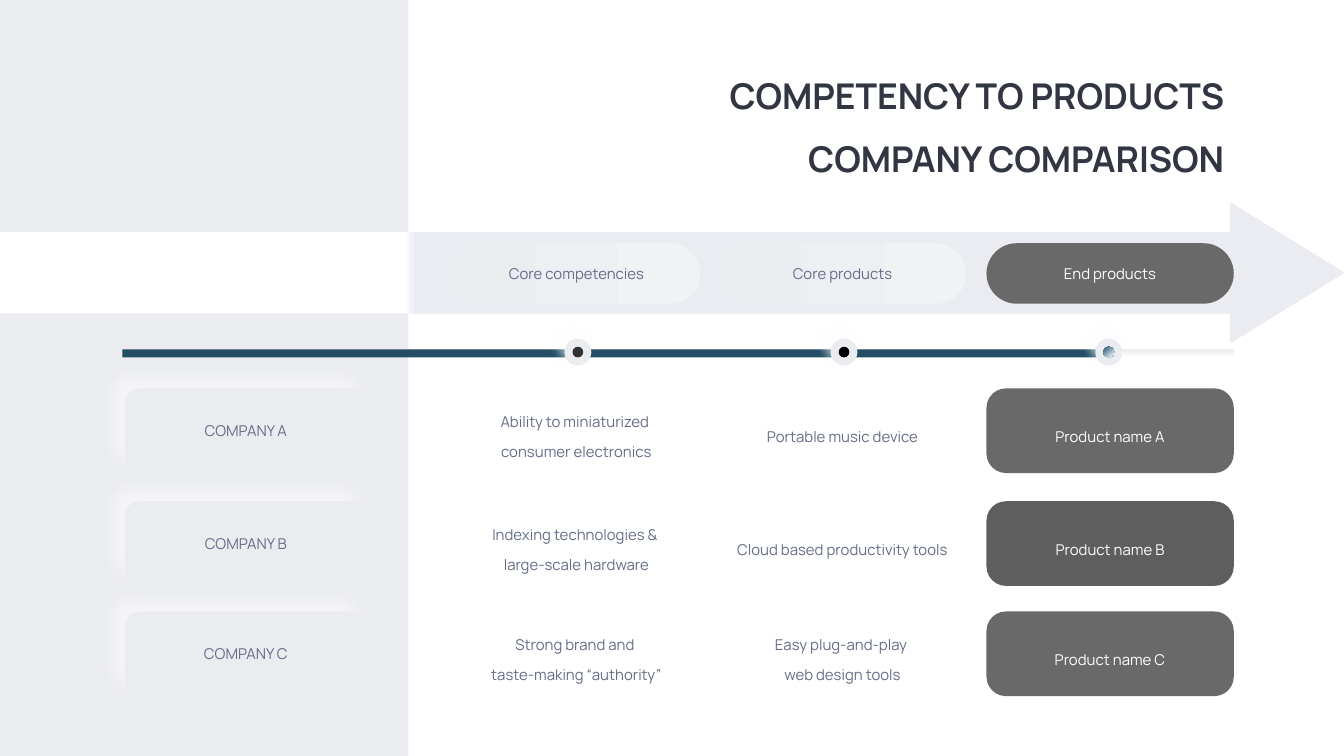
from dataclasses import dataclass

from pptx import Presentation
from pptx.dml.color import RGBColor
from pptx.enum.shapes import MSO_SHAPE
from pptx.enum.text import MSO_ANCHOR, MSO_AUTO_SIZE, PP_ALIGN
from pptx.oxml import parse_xml
from pptx.oxml.ns import nsdecls, qn
from pptx.util import Inches, Pt

RECTANGLE, ROUNDED = MSO_SHAPE.RECTANGLE, MSO_SHAPE.ROUNDED_RECTANGLE
OVAL, ARROW = MSO_SHAPE.OVAL, MSO_SHAPE.RIGHT_ARROW
CENTER, RIGHT = PP_ALIGN.CENTER, PP_ALIGN.RIGHT
TOP, MIDDLE = MSO_ANCHOR.TOP, MSO_ANCHOR.MIDDLE
GROW = MSO_AUTO_SIZE.SHAPE_TO_FIT_TEXT

WIDTH = 10
HEIGHT = WIDTH * 9 / 16
FONT = "Manrope"
WHITE, PANEL, BAND, PALE = "FFFFFF", "EBECF0", "EBECF1", "F1F2F4"
INK, SLATE, TEAL, GRAY, DARK_GRAY = "323643", "656C87", "234E65", "696969", "5E5E5E"

COLUMNS = (3.37, 5.35, 7.34)
ROWS = (2.89, 3.73, 4.55)
CELL_WIDTH, CELL_HEIGHT = 1.84, 0.63
HEADER_TOP, HEADER_HEIGHT = 1.81, 0.45
CARD_LEFT, CARD_WIDTH = 0.93, 1.8
TRACK_LEFT, TRACK_TOP, TRACK_HEIGHT = 0.91, 2.6, 0.06
DOT_Y, RING_SIZE, DOT_SIZE = 2.62, 0.2, 0.08


@dataclass(frozen=True)
class Gradient:
    stops: tuple[tuple[int, str], ...]
    angle: int = 0


@dataclass(frozen=True)
class Glow:
    """A white shadow towards the upper left, in points."""
    blur: int
    distance: int


@dataclass(frozen=True)
class Box:
    left: float
    top: float
    width: float
    height: float


@dataclass(frozen=True)
class Company:
    name: str
    competency: tuple[str, ...]
    products: tuple[str, ...]
    end_product: str
    end_fill: str = GRAY


@dataclass(frozen=True)
class Stage:
    title: str
    fill: str | Gradient
    color: str
    dot_x: float
    dot_fill: str | Gradient


SOFT = Gradient(((0, PALE), (100, PANEL)), 180)
STAGES = (
    Stage("Core competencies", SOFT, SLATE, 4.3, "323232"),
    Stage("Core products", SOFT, SLATE, 6.28, "000000"),
    Stage("End products", GRAY, WHITE, 8.25,
          Gradient(((0, TEAL), (84, "DAE5F1"), (100, "DAE5F1")), 50)),
)
COMPANIES = (
    Company("COMPANY A", ("Ability to miniaturized ", "consumer electronics"),
            ("Portable music device",), "Product name A"),
    Company("COMPANY B", ("Indexing technologies & ", "large-scale hardware"),
            ("Cloud based productivity tools",), "Product name B", DARK_GRAY),
    Company("COMPANY C", ("Strong brand and ", "taste-making “authority”"),
            ("Easy plug-and-play ", "web design tools"), "Product name C"),
)


def rgb(color: str) -> RGBColor:
    return RGBColor.from_string(color)


def apply_fill(shape, fill: str | Gradient) -> None:
    if isinstance(fill, str):
        shape.fill.solid()
        shape.fill.fore_color.rgb = rgb(fill)
        return
    shape.fill.gradient()
    properties = shape._element.spPr
    stops = "".join(f'<a:gs pos="{place * 1000}"><a:srgbClr val="{color}"/></a:gs>'
                    for place, color in fill.stops)
    properties.replace(properties.find(qn("a:gradFill")), parse_xml(
        f'<a:gradFill rotWithShape="1" {nsdecls("a")}><a:gsLst>{stops}</a:gsLst>'
        f'<a:lin ang="{fill.angle * 60000}" scaled="0"/></a:gradFill>'))


def apply_glow(shape, glow: Glow) -> None:
    effects = shape._element.spPr.find(qn("a:effectLst"))
    effects.append(parse_xml(
        f'<a:outerShdw {nsdecls("a")} blurRad="{Pt(glow.blur)}" dist="{Pt(glow.distance)}"'
        f' dir="{225 * 60000}" algn="ctr" rotWithShape="0"><a:srgbClr val="{WHITE}">'
        '<a:alpha val="56000"/></a:srgbClr></a:outerShdw>'))


def add_block(shapes, kind, box: Box, fill: str | Gradient,
              adjustments: tuple[float, ...] = (), glow: Glow | None = None):
    shape = shapes.add_shape(kind, Inches(box.left), Inches(box.top),
                             Inches(box.width), Inches(box.height))
    for index, value in enumerate(adjustments):
        shape.adjustments[index] = value
    apply_fill(shape, fill)
    shape.line.fill.background()
    shape.shadow.inherit = False
    if glow:
        apply_glow(shape, glow)
    return shape


def write(shape, lines: tuple[str, ...], color: str, size: int = 8, spacing: float = 1.0,
          align=CENTER, anchor=MIDDLE, bold: bool = False) -> None:
    frame = shape.text_frame
    frame.word_wrap = True
    frame.vertical_anchor = anchor
    frame.margin_left = frame.margin_right = Inches(0.07)
    frame.margin_top = frame.margin_bottom = Inches(0.04)
    for index, line in enumerate(lines):
        para = frame.add_paragraph() if index else frame.paragraphs[0]
        para.alignment = align
        para.line_spacing = spacing
        span = para.add_run()
        span.text = line
        span.font.name, span.font.size, span.font.bold = FONT, Pt(size), bold
        span.font.color.rgb = rgb(color)


def add_title(slide) -> None:
    title = slide.shapes.title
    title.left, title.top = Inches(5.1), Inches(0.35)
    title.width, title.height = Inches(4.08), Inches(0.88)
    write(title, ("COMPETENCY TO PRODUCTS COMPANY COMPARISON",), INK, 19, 1.5,
          RIGHT, TOP, bold=True)
    title.text_frame.auto_size = GROW


def add_header(shapes, left: float, stage: Stage) -> None:
    box = Box(left, HEADER_TOP, CELL_WIDTH, HEADER_HEIGHT)
    write(add_block(shapes, ROUNDED, box, stage.fill, (0.5,)), (stage.title,), stage.color)


def add_company(shapes, top: float, company: Company) -> None:
    cells = ((company.competency, WHITE, SLATE), (company.products, WHITE, SLATE),
             ((company.end_product,), company.end_fill, WHITE))
    for left, (lines, fill, color) in zip(COLUMNS, cells):
        box = Box(left, top, CELL_WIDTH, CELL_HEIGHT)
        write(add_block(shapes, ROUNDED, box, fill, (0.23,)), lines, color, spacing=1.66)
    card = add_block(shapes, ROUNDED, Box(CARD_LEFT, top, CARD_WIDTH, CELL_HEIGHT),
                     PANEL, (0.17,), Glow(9, 9))
    write(card, (company.name,), SLATE)


def add_marker(shapes, stage: Stage) -> None:
    group = shapes.add_group_shape()
    for size, fill, glow in ((RING_SIZE, PANEL, Glow(5, 4)), (DOT_SIZE, stage.dot_fill, None)):
        box = Box(stage.dot_x - size / 2, DOT_Y - size / 2, size, size)
        add_block(group.shapes, OVAL, box, fill, glow=glow)


def main() -> None:
    deck = Presentation()
    deck.slide_width, deck.slide_height = Inches(WIDTH), Inches(HEIGHT)
    slide = deck.slides.add_slide(deck.slide_layouts[5])
    shapes = slide.shapes
    add_title(slide)

    add_block(shapes, RECTANGLE, Box(0, 0, 3.04, HEIGHT), PANEL)
    add_block(shapes, ARROW, Box(0, 1.51, WIDTH, 1.04),
              Gradient(((0, WHITE), (30, WHITE), (31, BAND), (100, BAND))), (0.58, 0.81))
    add_block(shapes, RECTANGLE, Box(TRACK_LEFT, TRACK_TOP, 8.27, TRACK_HEIGHT),
              Gradient(((0, WHITE), (100, PANEL)), 270))
    for left, stage in zip(COLUMNS, STAGES):
        add_header(shapes, left, stage)
    for top, company in zip(ROWS, COMPANIES):
        add_company(shapes, top, company)
    add_block(shapes, RECTANGLE, Box(TRACK_LEFT, TRACK_TOP, 7.35, TRACK_HEIGHT), TEAL)
    for stage in STAGES:
        add_marker(shapes, stage)
    deck.save("out.pptx")


if __name__ == "__main__":
    main()
